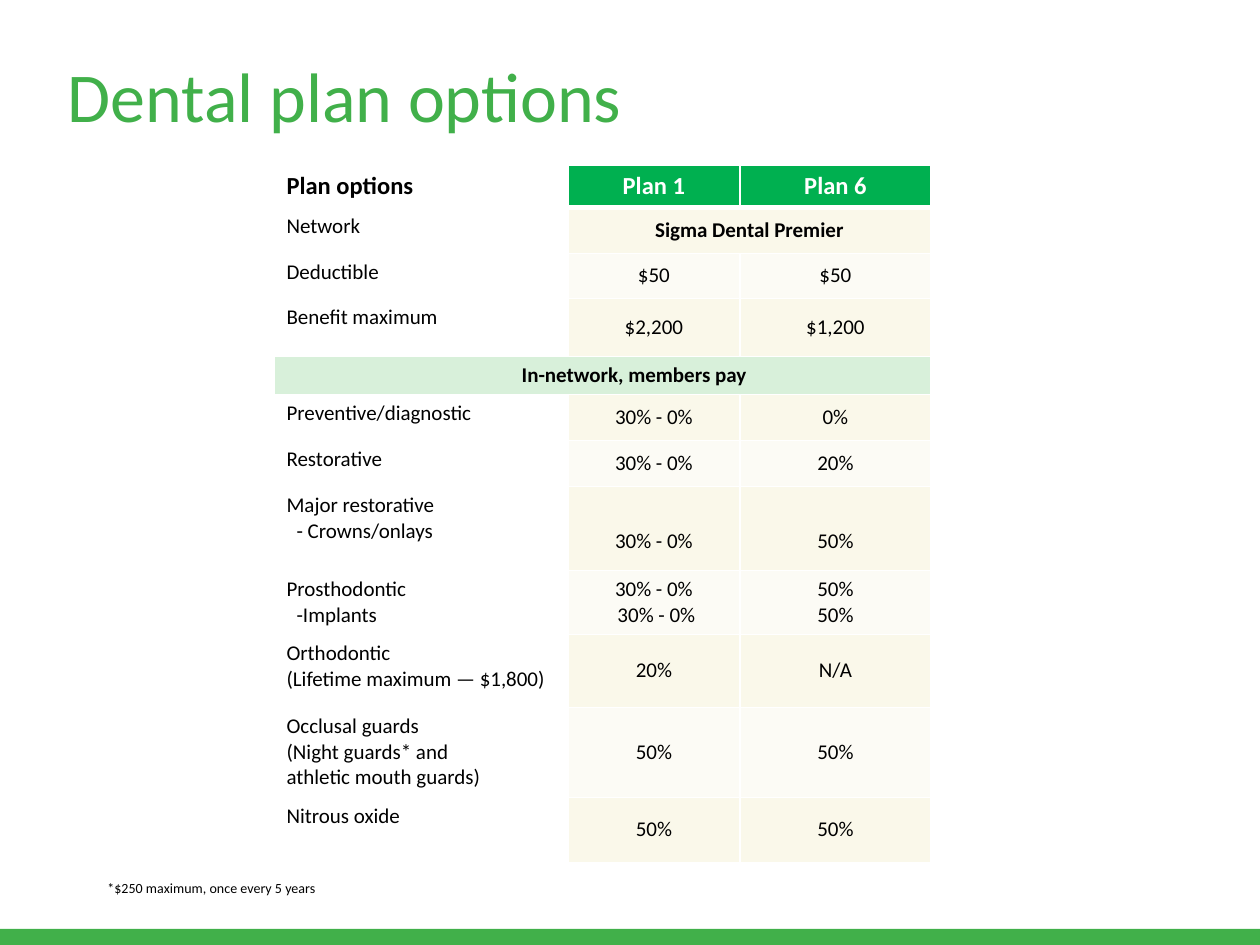
"""Build the dental plan options slide."""
from dataclasses import dataclass

from lxml.etree import SubElement
from pptx import Presentation
from pptx.dml.color import RGBColor as RGB
from pptx.enum.shapes import MSO_SHAPE as Kind
from pptx.enum.text import MSO_ANCHOR as Anchor, MSO_AUTO_SIZE as Fit, PP_ALIGN as Align
from pptx.oxml.ns import qn
from pptx.util import Pt

SCALE = 914400 / 126


@dataclass(frozen=True)
class Theme:
    font: str = "Calibri"
    green: str = "41B04A"
    head: str = "00B050"
    band: str = "D8F0DA"
    odd: str = "FAF8EA"
    even: str = "FCFBF5"
    white: str = "FFFFFF"
    black: str = "000000"
    title: int = 40
    top: int = 14
    body: int = 12
    note: int = 8


@dataclass(frozen=True)
class Row:
    high: int
    label: str
    vals: tuple[str, ...]
    bold: bool = False
    inset: int = 0
    drop: int = 0
    nudge: int = 0


THEME = Theme()
COLS = (294, 172, 191)
ROWS = (
    Row(42, "Plan options", ("Plan 1", "Plan 6"), bold=True),
    Row(46, "Network", ("Sigma Dental Premier",), bold=True),
    Row(45, "Deductible", ("$50", "$50")),
    Row(58, "Benefit maximum", ("$2,200", "$1,200")),
    Row(37, "In-network, members pay", (), bold=True),
    Row(46, "Preventive/diagnostic", ("30% - 0%", "0%")),
    Row(46, "Restorative", ("30% - 0%", "20%")),
    Row(84, "Major restorative\n- Crowns/onlays", ("30% - 0%", "50%"), inset=10, drop=26),
    Row(63, "Prosthodontic\n-Implants", ("30% - 0%\n30% - 0%", "50%\n50%"), inset=10, nudge=5),
    Row(73, "Orthodontic\n(Lifetime maximum — $1,800)", ("20%", "N/A")),
    Row(90, "Occlusal guards\n(Night guards* and\vathletic mouth guards)", ("50%", "50%")),
    Row(65, "Nitrous oxide", ("50%", "50%")),
)


def px(num: int) -> int:
    """Turn pixels into EMU."""
    return round(num * SCALE)


def write(frame, text: str, size: int, tint: str, bold=False, align=Align.LEFT, inset=0) -> None:
    """Fill a text frame, with later paragraphs inset."""
    frame.text = text
    for num, para in enumerate(frame.paragraphs):
        if num and inset:
            para._p.get_or_add_pPr().set("marL", str(px(inset)))
        para.alignment = align
        font = para.font
        font.name, font.size, font.bold = THEME.font, Pt(size), bold
        font.color.rgb = RGB.from_string(tint)


def edge(cell, head: bool) -> None:
    """Draw white cell borders, thick below the head."""
    props = cell._tc.get_or_add_tcPr()
    for side in "LRTB" if head else "LRB":
        wide = 3 if head and side == "B" else 1
        line = SubElement(props, qn(f"a:ln{side}"), w=str(Pt(wide)))
        fill = SubElement(line, qn("a:solidFill"))
        SubElement(fill, qn("a:srgbClr"), val=THEME.white)


def paint(cell, tint: str | None) -> None:
    """Fill a cell, or leave it clear."""
    if tint:
        cell.fill.solid()
        cell.fill.fore_color.rgb = RGB.from_string(tint)
    else:
        cell.fill.background()


def draw_row(table, num: int, row: Row) -> None:
    """Write one plan row."""
    head, band = num == 0, not row.vals
    shade = THEME.head if head else THEME.odd if num % 2 else THEME.even
    size = THEME.top if head else THEME.body
    table.rows[num].height = px(row.high)
    cells = [table.cell(num, col) for col in range(len(COLS))]
    for col, cell in enumerate(cells):
        edge(cell, head)
        paint(cell, THEME.band if band else shade if col else None)
    first = cells[0]
    if band:
        first.merge(cells[-1])
        first.vertical_anchor = Anchor.MIDDLE
        first.margin_left = px(76)
    elif len(row.vals) == 1:
        cells[1].merge(cells[2])
    write(first.text_frame, row.label, size, THEME.black, head or band,
          Align.CENTER if band else Align.LEFT, row.inset)
    for col, (cell, text) in enumerate(zip(cells[1:], row.vals)):
        if not head:
            cell.vertical_anchor = Anchor.MIDDLE
        cell.margin_top = px(6 + row.drop)
        write(cell.text_frame, text, size, THEME.white if head else THEME.black,
              row.bold, Align.CENTER, 0 if col else row.nudge)


def draw_table(slide) -> None:
    """Add the plan table."""
    high = sum(row.high for row in ROWS)
    table = slide.shapes.add_table(len(ROWS), len(COLS), px(274), px(165),
                                   px(sum(COLS)), px(high)).table
    table.first_row = table.horz_banding = False
    for col, wide in zip(table.columns, COLS):
        col.width = px(wide)
    for num, row in enumerate(ROWS):
        draw_row(table, num, row)


def draw_bar(slide) -> None:
    """Add the green foot bar."""
    bar = slide.shapes.add_shape(Kind.RECTANGLE, 0, px(929), px(1260), px(16))
    bar.shadow.inherit = False
    bar.fill.solid()
    bar.fill.fore_color.rgb = RGB.from_string(THEME.green)
    bar.line.fill.background()


def draw_title(slide) -> None:
    """Place and write the title."""
    title = slide.shapes.title
    title.left, title.top, title.width, title.height = map(px, (55, 40, 1142, 110))
    frame = title.text_frame
    frame.auto_size, frame.vertical_anchor = Fit.NONE, Anchor.MIDDLE
    write(frame, "Dental plan options", THEME.title, THEME.green)


def draw_note(slide) -> None:
    """Add the footnote."""
    frame = slide.shapes.add_textbox(px(95), px(873), px(1218), px(30)).text_frame
    frame.word_wrap = True
    write(frame, "*$250 maximum, once every 5 years", THEME.note, THEME.black)


def main() -> None:
    """Build and save the slide."""
    deck = Presentation()
    deck.slide_width, deck.slide_height = px(1260), px(945)
    slide = deck.slides.add_slide(deck.slide_layouts[5])
    for draw in (draw_bar, draw_title, draw_table, draw_note):
        draw(slide)
    deck.save("out.pptx")


if __name__ == "__main__":
    main()
